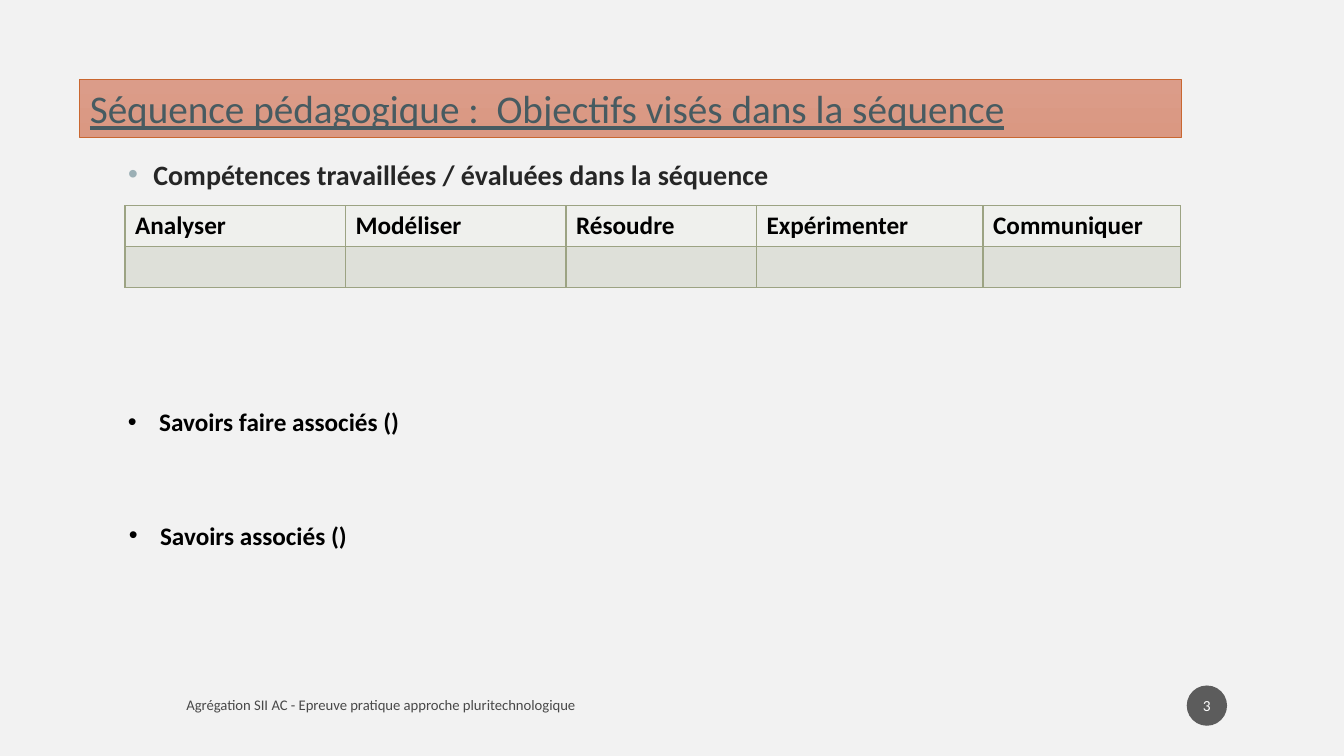
import pptx
import pptx.util
import pptx.dml.color
import pptx.enum.shapes
import pptx.enum.text
import pptx.oxml
import pptx.oxml.ns
import lxml.etree

WIDTH, HEIGHT = pptx.util.Inches(13.33), pptx.util.Inches(7.5)
FONT = "Calibri"
COLORS = {
    "background": "F2F2F2", "title": "475B61", "title_line": "C96731",
    "title_top": "DB9C89", "title_bottom": "DA9882",
    "heading": "262626", "heading_bullet": "9BAFB5", "text": "000000",
    "header": "EFF0ED", "row": "DEE0D9", "border": "9CA383",
    "badge": "1D1D1D", "number": "FFFFFF",
}
SKILLS = {"Analyser": 2.19, "Modéliser": 2.19, "Résoudre": 1.89,
          "Expérimenter": 2.25, "Communiquer": 1.96}
ANCHOR = pptx.enum.text.MSO_ANCHOR
ALIGN = pptx.enum.text.PP_ALIGN


def color(name):
    return pptx.dml.color.RGBColor.from_string(COLORS[name])


def area(left, top, width, height):
    """Turn percentages of the slide into a box of lengths."""
    return (int(WIDTH * left / 100), int(HEIGHT * top / 100),
            int(WIDTH * width / 100), int(HEIGHT * height / 100))


def add_child(parent, tag, **attributes):
    child = lxml.etree.SubElement(parent, pptx.oxml.ns.qn(tag))
    for name, value in attributes.items():
        child.set(name, str(value))
    return child


def set_opacity(fill_parent, percent):
    for tint in fill_parent.iter(pptx.oxml.ns.qn("a:srgbClr")):
        add_child(tint, "a:alpha", val=percent * 1000)


def move(shape, box):
    shape.left, shape.top, shape.width, shape.height = box


def write(frame, text, size=18, fill="text", bold=False, underline=False,
          align=ALIGN.LEFT, anchor=ANCHOR.TOP, opacity=100):
    frame.word_wrap = True
    frame.auto_size = pptx.enum.text.MSO_AUTO_SIZE.NONE
    frame.vertical_anchor = anchor
    para = frame.paragraphs[0]
    para.alignment = align
    para.space_before = pptx.util.Pt(0)
    span = para.add_run()
    span.text = text
    span.font.name, span.font.size = FONT, pptx.util.Pt(size)
    span.font.bold, span.font.underline = bold, underline
    span.font.color.rgb = color(fill)
    if opacity < 100:
        set_opacity(span.font.fill._xPr, opacity)
    return para


def add_bullet(para, indent, fill):
    properties = para._p.get_or_add_pPr()
    hang = pptx.util.Inches(indent)
    properties.set("marL", str(hang))
    properties.set("indent", str(-hang))
    add_child(add_child(properties, "a:buClr"), "a:srgbClr", val=COLORS[fill])
    add_child(properties, "a:buFont", typeface="Arial")
    add_child(properties, "a:buChar", char="•")


def add_title(page, box):
    title = page.shapes.title
    move(title, box)
    title.fill.gradient()
    title.fill.gradient_angle = 270
    for stop, name in zip(title.fill.gradient_stops, ("title_top", "title_bottom")):
        stop.color.rgb = color(name)
    title.line.color.rgb = color("title_line")
    title.line.width = pptx.util.Pt(0.5)
    write(title.text_frame, "Séquence pédagogique :  Objectifs visés dans la séquence",
          size=28, fill="title", underline=True)


def add_heading(page, box):
    body = page.placeholders[1]
    move(body, box)
    para = write(body.text_frame, "Compétences travaillées / évaluées dans la séquence",
                 size=20, fill="heading", bold=True)
    add_bullet(para, 0.25, "heading_bullet")


def add_borders(cell):
    properties = cell._tc.get_or_add_tcPr()
    for position, side in enumerate(("a:lnL", "a:lnR", "a:lnT", "a:lnB")):
        line = pptx.oxml.parse_xml(
            f'<{side} {pptx.oxml.ns.nsdecls("a")} w="12700"><a:solidFill>'
            f'<a:srgbClr val="{COLORS["border"]}"/></a:solidFill></{side}>')
        properties.insert(position, line)


def add_skill_table(page, box):
    table = page.shapes.add_table(2, len(SKILLS), *box).table
    table.first_row = table.horz_banding = False
    total = sum(SKILLS.values())
    for index, (skill, share) in enumerate(SKILLS.items()):
        table.columns[index].width = int(box[2] * share / total)
        for row, fill in enumerate(("header", "row")):
            cell = table.cell(row, index)
            cell.fill.solid()
            cell.fill.fore_color.rgb = color(fill)
            add_borders(cell)
        span = table.cell(0, index).text_frame.paragraphs[0].add_run()
        span.text = skill
        span.font.name, span.font.size = FONT, pptx.util.Pt(18)
        span.font.bold = True
        span.font.color.rgb = color("text")


def add_topic(page, box, text):
    topic = page.shapes.add_textbox(*box)
    add_bullet(write(topic.text_frame, text, bold=True), 0.31, "text")


def add_footer(page, box):
    footer = page.shapes.add_textbox(*box)
    write(footer.text_frame,
          "Agrégation SII AC - Epreuve pratique approche pluritechnologique",
          size=10.5, anchor=ANCHOR.MIDDLE, opacity=70)


def add_page_number(page, box):
    badge = page.shapes.add_shape(pptx.enum.shapes.MSO_SHAPE.OVAL, *box)
    badge.shadow.inherit = False
    badge.fill.solid()
    badge.fill.fore_color.rgb = color("badge")
    set_opacity(badge._element.spPr, 70)
    badge.line.fill.background()
    frame = badge.text_frame
    frame.margin_left = frame.margin_right = pptx.util.Inches(0.02)
    write(frame, "3", size=11, fill="number", align=ALIGN.CENTER, anchor=ANCHOR.MIDDLE)


def build_objectives(deck):
    page = deck.slides.add_slide(deck.slide_layouts[1])
    page.background.fill.solid()
    page.background.fill.fore_color.rgb = color("background")
    # Title and competences
    add_title(page, area(5.93, 10.53, 82, 7.6))
    add_skill_table(page, area(9.3, 27.2, 78.54, 10.8))
    add_heading(page, area(8.78, 20.13, 79.14, 9.2))
    # Know-how and knowledge
    add_topic(page, area(8.78, 53.07, 50, 5.33), "Savoirs faire associés ()")
    add_topic(page, area(8.85, 68.13, 50, 5.33), "Savoirs associés ()")
    # Foot of the slide
    add_footer(page, area(13.13, 90.93, 48.4, 4.67))
    add_page_number(page, area(88.3, 90.67, 3, 5.33))


def main():
    deck = pptx.Presentation()
    deck.slide_width, deck.slide_height = WIDTH, HEIGHT
    build_objectives(deck)
    deck.save("out.pptx")


if __name__ == "__main__":
    main()
